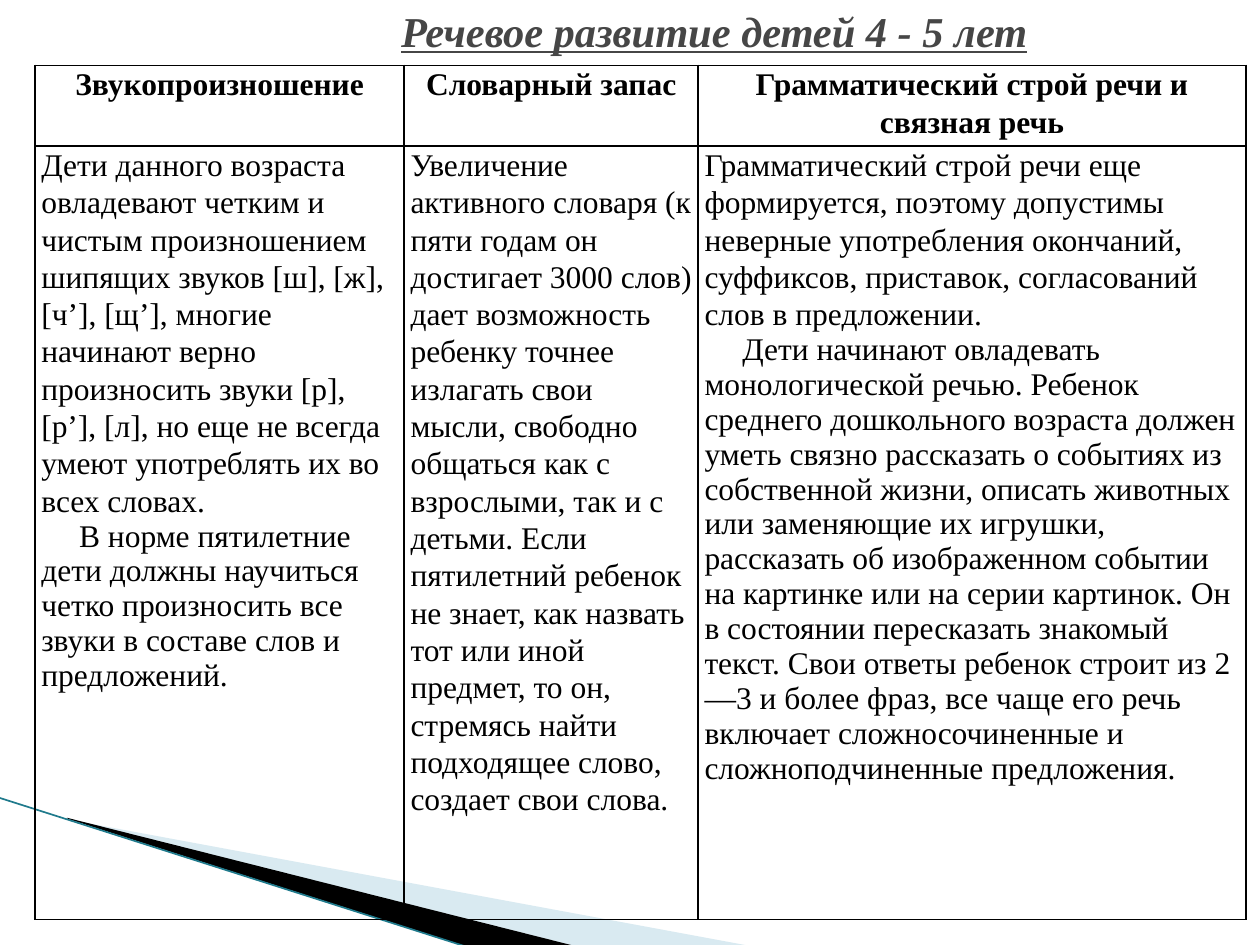
"""Builds a slide with a table on the speech development of children aged 4 to 5."""
import pptx
import pptx.dml.color
import pptx.enum.text
import pptx.oxml
import pptx.oxml.ns
import pptx.util
from lxml import etree

Pt = pptx.util.Pt
RGB = pptx.dml.color.RGBColor.from_string
qn = pptx.oxml.ns.qn
ALIGN = pptx.enum.text.PP_ALIGN
ANCHOR = pptx.enum.text.MSO_ANCHOR
FONT = "Times New Roman"
COLORS = {"title": "464646", "text": "000000", "border": "000000",
          "pale": "A0CBDC", "dark": "000000", "edge": "1F7A8C"}


def write(p, text, size=18, color="text", bold=False, italic=False,
          underline=False, align=ALIGN.LEFT, spacing=1.0, indent=0):
    if indent:
        p._p.get_or_add_pPr().set("marL", "0")
        p._p.get_or_add_pPr().set("indent", str(Pt(indent)))
    p.alignment = align
    p.line_spacing = spacing
    r = p.add_run()
    r.text = text
    r.font.name = FONT
    r.font.size = Pt(size)
    r.font.bold = bold
    r.font.italic = italic
    r.font.underline = underline
    r.font.color.rgb = RGB(COLORS[color])


prs = pptx.Presentation()
prs.slide_width, prs.slide_height = Pt(720), Pt(540)
s = prs.slides.add_slide(prs.slide_layouts[5])

wedges = [
    ("pale", 40, [(39.6, 468.5), (428.4, 540.5), (328.3, 540.5), (39.6, 468)]),
    ("dark", 100, [(38.2, 467.3), (329, 540.7), (267.8, 541.2), (38.9, 468)]),
]
for color, opacity, points in wedges:
    points = [(Pt(x), Pt(y)) for x, y in points]
    fb = s.shapes.build_freeform(*points[0])
    fb.add_line_segments(points[1:], close=True)
    sp = fb.convert_to_shape()
    sp.shadow.inherit = False
    sp.fill.solid()
    sp.fill.fore_color.rgb = RGB(COLORS[color])
    sp.line.fill.background()
    if opacity < 100:
        clr = sp._element.spPr.find(".//" + qn("a:srgbClr"))
        etree.SubElement(clr, qn("a:alpha"), val=str(opacity * 1000))

edge = s.shapes.add_connector(1, Pt(-0.7), Pt(455.8), Pt(267.8), Pt(541.4))
edge.line.color.rgb = RGB(COLORS["edge"])
edge.line.width = Pt(0.95)
etree.SubElement(edge._element.spPr, qn("a:effectLst"))

title = s.shapes.title
title.left, title.top, title.width, title.height = Pt(113), Pt(1), Pt(590.4), Pt(33)
tf = title.text_frame
tf.word_wrap = True
tf.auto_size = pptx.enum.text.MSO_AUTO_SIZE.NONE
tf.vertical_anchor = ANCHOR.MIDDLE
tf.margin_top = tf.margin_bottom = 0
write(tf.paragraphs[0], "Речевое развитие детей 4 - 5 лет", size=24.3, color="title",
      bold=True, italic=True, underline=True, align=ALIGN.CENTER)

columns = [
    (211, "Звукопроизношение", [
        "Дети данного возраста овладевают четким и чистым произношением шипящих "
        "звуков [ш], [ж], [ч’], [щ’], многие начинают верно произносить звуки [р], "
        "[р’], [л], но еще не всегда умеют употреблять их во всех словах.",
        "В норме пятилетние дети должны научиться четко произносить все звуки "
        "в составе слов и предложений."]),
    (168, "Словарный запас", [
        "Увеличение активного словаря (к пяти годам он достигает 3000 слов) дает "
        "возможность ребенку точнее излагать свои мысли, свободно общаться как с "
        "взрослыми, так и с детьми. Если пятилетний ребенок не знает, как назвать "
        "тот или иной предмет, то он, стремясь найти подходящее слово, создает "
        "свои слова."]),
    (313, "Грамматический строй речи и связная речь", [
        "Грамматический строй речи еще формируется, поэтому допустимы неверные "
        "употребления окончаний, суффиксов, приставок, согласований слов "
        "в предложении.",
        "Дети начинают овладевать монологической речью. Ребенок среднего "
        "дошкольного возраста должен уметь связно рассказать о событиях из "
        "собственной жизни, описать животных или заменяющие их игрушки, рассказать "
        "об изображенном событии на картинке или на серии картинок. Он в состоянии "
        "пересказать знакомый текст. Свои ответы ребенок строит из 2—3 и более "
        "фраз, все чаще его речь включает сложносочиненные и сложноподчиненные "
        "предложения."]),
]
heights = [46, 442]
table = s.shapes.add_table(2, len(columns), Pt(20), Pt(37.4), Pt(692), Pt(sum(heights))).table
table.first_row = table.horz_banding = False
for row, height in zip(table.rows, heights):
    row.height = Pt(height)

for c, (width, heading, body) in enumerate(columns):
    table.columns[c].width = Pt(width)
    write(table.cell(0, c).text_frame.paragraphs[0], heading, bold=True,
          align=ALIGN.CENTER, spacing=1.07)
    tf = table.cell(1, c).text_frame
    for i, text in enumerate(body):
        p = tf.add_paragraph() if i else tf.paragraphs[0]
        write(p, text, spacing=1.0 if i else 1.07, indent=21.6 if i else 0)

for cell in table.iter_cells():
    cell.margin_left = cell.margin_right = Pt(3.6)
    cell.margin_top = cell.margin_bottom = 0
    cell.vertical_anchor = ANCHOR.TOP
    tcPr = cell._tc.get_or_add_tcPr()
    for side in ("lnL", "lnR", "lnT", "lnB"):
        ln = etree.SubElement(tcPr, qn("a:" + side), w=str(Pt(1)))
        fill = etree.SubElement(ln, qn("a:solidFill"))
        etree.SubElement(fill, qn("a:srgbClr"), val=COLORS["border"])
    cell.fill.background()

prs.save("out.pptx")
